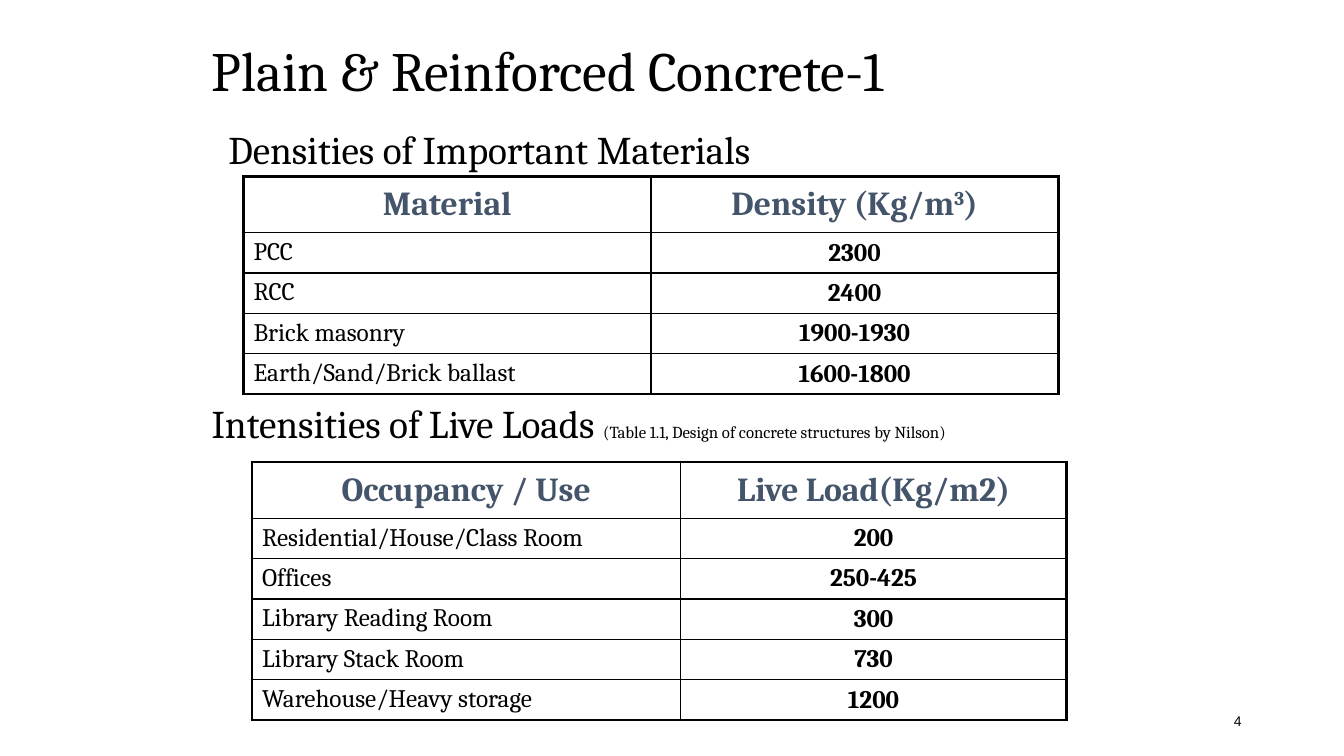
from dataclasses import dataclass

from lxml.etree import SubElement
from pptx import Presentation
from pptx.dml.color import RGBColor as RGB
from pptx.enum.text import MSO_ANCHOR as Anchor, PP_ALIGN as Align
from pptx.oxml.ns import qn
from pptx.util import Inches, Pt


@dataclass(frozen=True)
class Theme:
    font: str = "Cambria"
    number_font: str = "Arial"
    ink: str = "000000"
    header: str = "44546A"
    title_size: float = 39.6
    heading_size: float = 28
    header_size: float = 24
    cell_size: float = 18
    note_size: float = 12
    number_size: float = 10
    frame: float = 2.25
    rule: float = 1


def grid(n):
    """Length of n grid units; the slide is 160 columns by 90 rows."""
    return Inches(n / 12)


class Deck:
    def __init__(self, theme):
        self.theme = theme
        self.prs = Presentation()
        self.prs.slide_width, self.prs.slide_height = grid(160), grid(90)
        self.s = self.prs.slides.add_slide(self.prs.slide_layouts[5])

    def run(self, p, text, size, color=None, bold=False, font=None, raised=False):
        r = p.add_run()
        r.text = text
        r.font.name = font or self.theme.font
        r.font.size = Pt(size)
        r.font.bold = bold
        r.font.color.rgb = RGB.from_string(color or self.theme.ink)
        if raised:
            r.font._element.set("baseline", "30000")

    def space_before(self, p, percent=20):
        """Paragraph spacing as a share of the text size."""
        before = SubElement(p._p.get_or_add_pPr(), qn("a:spcBef"))
        SubElement(before, qn("a:spcPct"), val=str(percent * 1000))

    def title(self, text, x, y, w, h):
        sp = self.s.shapes.title
        sp.left, sp.top, sp.width, sp.height = map(grid, (x, y, w, h))
        tf = sp.text_frame
        tf.vertical_anchor = Anchor.MIDDLE
        p = tf.paragraphs[0]
        p.alignment, p.line_spacing = Align.LEFT, 0.9
        self.run(p, text, self.theme.title_size)

    def text(self, x, y, w, h, anchor=Anchor.TOP):
        """Add a text box and return its first paragraph."""
        tf = self.s.shapes.add_textbox(*map(grid, (x, y, w, h))).text_frame
        tf.word_wrap = True
        tf.vertical_anchor = anchor
        return tf.paragraphs[0]

    def borders(self, cell, thick_sides):
        tcPr = cell._tc.get_or_add_tcPr()
        for side in "LRTB":
            width = self.theme.frame if side in thick_sides else self.theme.rule
            ln = SubElement(tcPr, qn("a:ln" + side), w=str(Pt(width)))
            fill = SubElement(ln, qn("a:solidFill"))
            SubElement(fill, qn("a:srgbClr"), val=self.theme.ink)

    def table(self, x, y, widths, row_height, header, rows, header_height=6.7):
        """Header cells are lists of (text, raised) runs; rows are label and value."""
        t = self.theme
        height = header_height + row_height * len(rows)
        size = map(grid, (x, y, sum(widths), height))
        tbl = self.s.shapes.add_table(len(rows) + 1, len(widths), *size).table
        tbl.first_row = tbl.horz_banding = False
        for col, width in zip(tbl.columns, widths):
            col.width = grid(width)
        cells = [header] + [[[(text, False)] for text in row] for row in rows]
        for i, row in enumerate(cells):
            tbl.rows[i].height = grid(row_height if i else header_height)
            for j, runs in enumerate(row):
                cell = tbl.cell(i, j)
                label = i > 0 and j == 0
                thick = "LR"[j] + ("T" if i == 0 else "B" if i == len(rows) else "")
                self.borders(cell, thick)
                cell.fill.background()
                cell.vertical_anchor = Anchor.TOP if label else Anchor.MIDDLE
                p = cell.text_frame.paragraphs[0]
                p.alignment = Align.LEFT if label else Align.CENTER
                self.space_before(p)
                for text, raised in runs:
                    self.run(p, text, t.cell_size if i else t.header_size,
                             t.ink if i else t.header, not label, raised=raised)


def main():
    t = Theme()
    deck = Deck(t)

    p = deck.text(113, 83.4, 36, 4.8, Anchor.MIDDLE)
    p.alignment = Align.RIGHT
    deck.run(p, "4", t.number_size, font=t.number_font)

    deck.title("Plain & Reinforced Concrete-1", 24, 4, 99, 9.6)

    p = deck.text(26, 15, 100, 9.5)
    p.line_spacing, p.space_before = 0.9, Pt(10)
    deck.run(p, "Densities of Important Materials", t.heading_size)

    deck.table(29, 21, (48.5, 48.5), 4.8,
               [[("Material", False)],
                [("Density (Kg/m", False), ("3", True), (")", False)]],
               [("PCC", "2300"),
                ("RCC", "2400"),
                ("Brick masonry", "1900-1930"),
                ("Earth/Sand/Brick ballast", "1600-1800")])

    p = deck.text(24, 47, 100, 7)
    deck.space_before(p)
    deck.run(p, "Intensities of Live Loads ", t.heading_size)
    deck.run(p, "(Table 1.1, Design of concrete structures by Nilson)", t.note_size)

    deck.table(30, 55, (51, 46), 4.5,
               [[("Occupancy / Use", False)], [("Live Load(Kg/m2)", False)]],
               [("Residential/House/Class Room", "200"),
                ("Offices", "250-425"),
                ("Library Reading Room", "300"),
                ("Library Stack Room", "730"),
                ("Warehouse/Heavy storage", "1200")])

    deck.prs.save("out.pptx")


if __name__ == "__main__":
    main()
